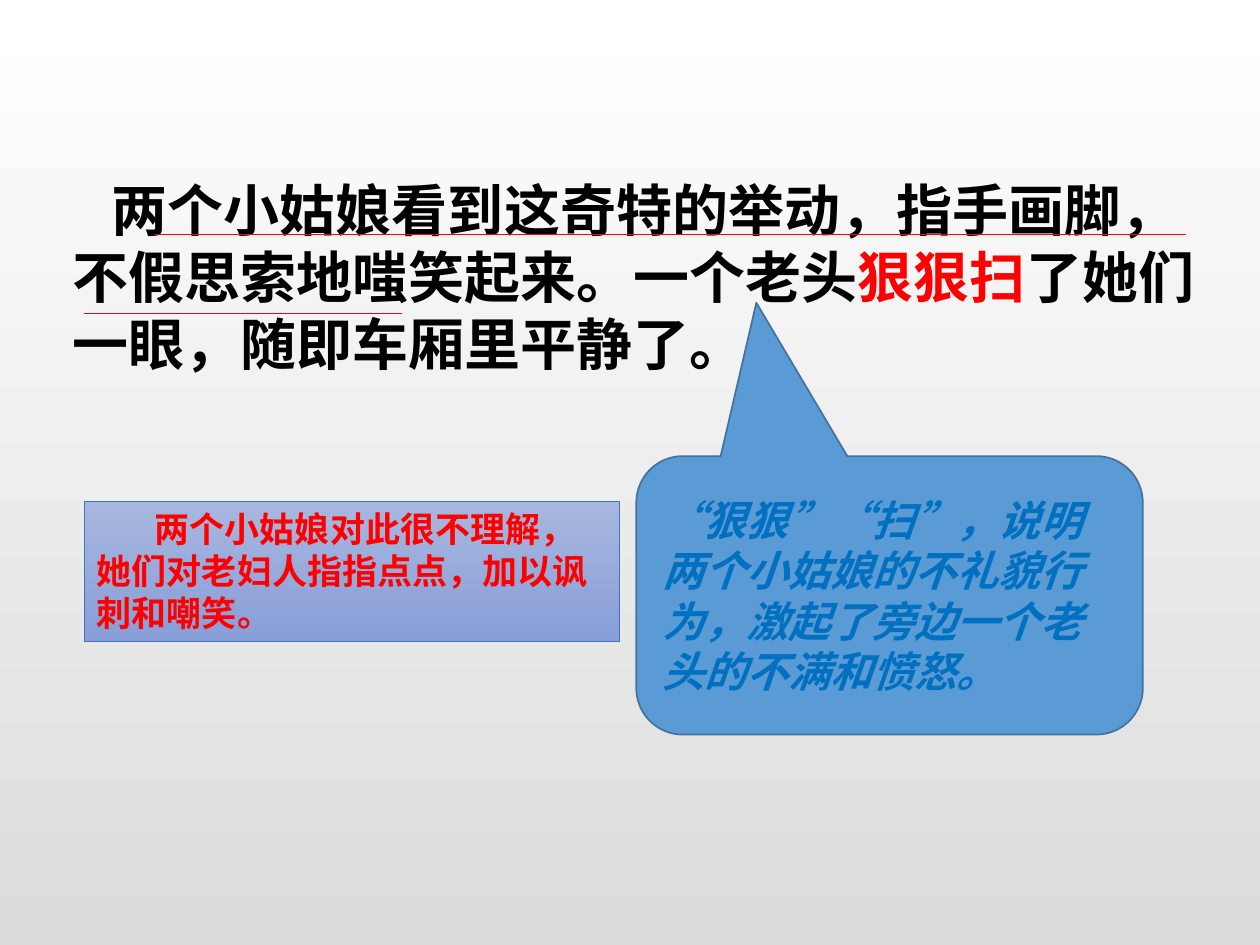
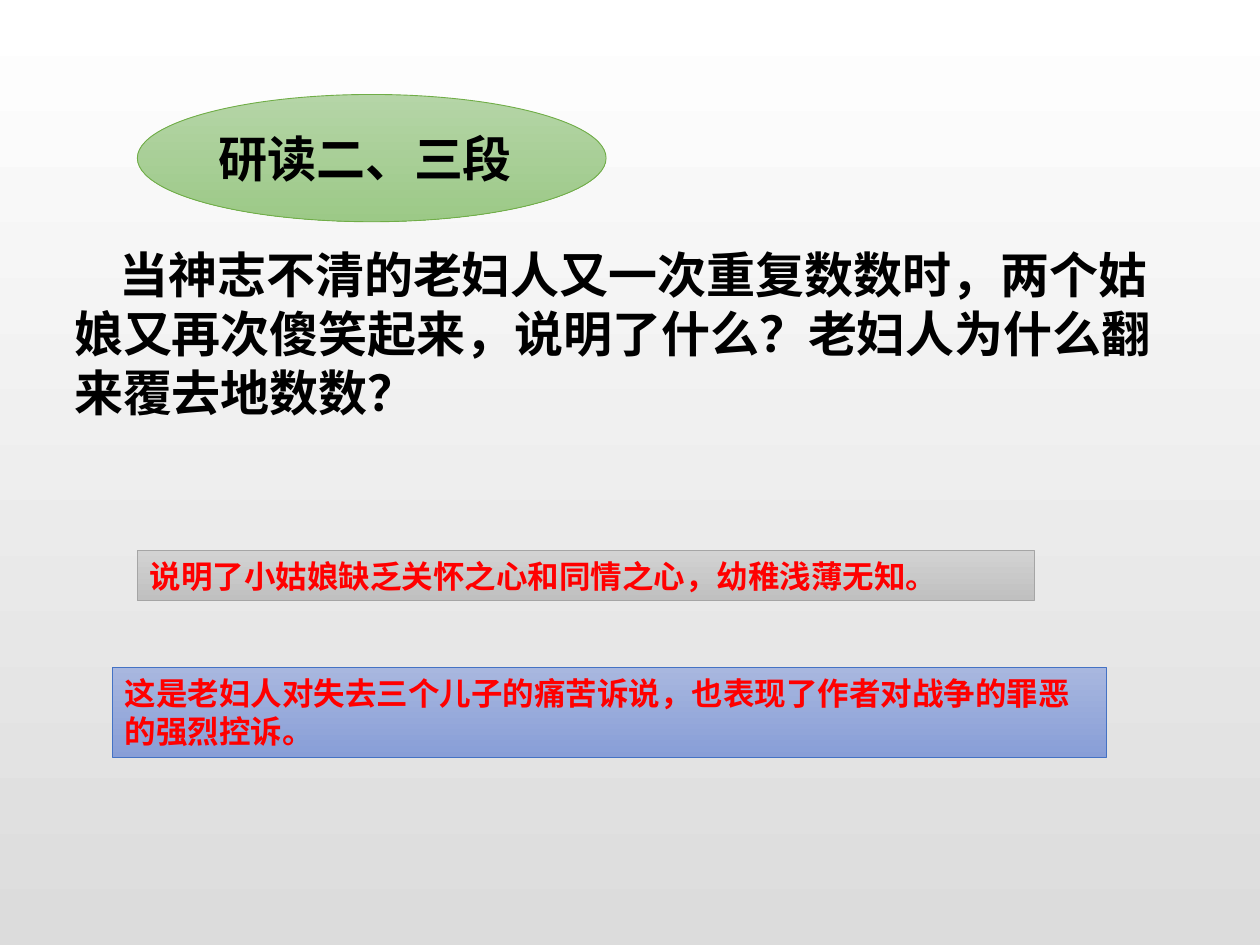
import pptx
import pptx.util
import pptx.dml.color
import pptx.enum.shapes
import pptx.enum.text
import pptx.oxml
import pptx.oxml.ns

Inches = pptx.util.Inches
Pt = pptx.util.Pt
SHAPE = pptx.enum.shapes.MSO_SHAPE
ANCHOR = pptx.enum.text.MSO_ANCHOR

COLORS = {
    "black": "000000", "red": "FF0000", "answer": "0070C0",
    "callout": "5B9BD5", "callout_edge": "43739E",
    "page_top": "FFFFFF", "page_end": "DCDCDC",
    "blue_top": "A8B7DF", "blue_end": "889ED7", "blue_edge": "4472C4",
    "gray_top": "D2D2D2", "gray_end": "C0C0C0", "gray_edge": "A5A5A5",
    "green_top": "B5D5A7", "green_end": "9CC987", "green_edge": "70AD47",
}
CJK = "Noto Sans CJK SC"

PASSAGE = {"font": CJK, "color": "black"}
NOTE = {"shape": SHAPE.RECTANGLE, "font": "Arial", "color": "red"}
BLUE_NOTE = {**NOTE, "gradient": "blue"}
GRAY_NOTE = {**NOTE, "gradient": "gray"}
HEADING = {"shape": SHAPE.OVAL, "gradient": "green", "font": CJK,
           "color": "black", "anchor": ANCHOR.MIDDLE}
CALLOUT = {"shape": SHAPE.ROUNDED_RECTANGULAR_CALLOUT, "solid": "callout",
           "edge": 1, "adjust": (-0.263, -1.051, 0.167), "font": CJK,
           "color": "answer", "italic": True, "anchor": ANCHOR.MIDDLE}

SLIDES = [
    {
        "boxes": [
            (PASSAGE, (0.48, 1.34, 9.13, 1.72), 32, 0.31,
             [("两个小姑娘看到这奇特的举动，指手画脚，不假思索地嗤笑起来。一个老头", None),
              ("狠狠扫", "red"),
              ("了她们一眼，随即车厢里平静了。", None)]),
            (CALLOUT, (5.05, 3.62, 4.02, 2.21), 24, 0,
             [("“狠狠”“扫”，说明两个小姑娘的不礼貌行为，激起了旁边一个老头的不满和愤怒。", None)]),
            (BLUE_NOTE, (0.67, 3.98, 4.25, 1.11), 20, 0.46,
             [("两个小姑娘对此很不理解，她们对老妇人指指点点，加以讽刺和嘲笑。", None)]),
        ],
        "underlines": [(1.22, 9.41, 1.86), (0.67, 3.19, 2.49)],
    },
    {
        "boxes": [
            (PASSAGE, (0.49, 1.89, 8.86, 1.51), 28, 0.36,
             [("当神志不清的老妇人又一次重复数数时，两个姑娘又再次傻笑起来，说明了什么？老妇人为什么翻来覆去地数数？", None)]),
            (GRAY_NOTE, (1.09, 4.37, 7.12, 0.4), 18, 0,
             [("说明了小姑娘缺乏关怀之心和同情之心，幼稚浅薄无知。", None)]),
            (BLUE_NOTE, (0.89, 5.3, 7.89, 0.71), 18, 0,
             [("这是老妇人对失去三个儿子的痛苦诉说，也表现了作者对战争的罪恶的强烈控诉。", None)]),
            (HEADING, (1.09, 0.75, 3.72, 1.01), 28, 0,
             [("研读二、三段", None)]),
        ],
        "underlines": [],
    },
]


def rgb(name):
    return pptx.dml.color.RGBColor.from_string(COLORS[name])


def shade(fill, name):
    fill.gradient()
    fill.gradient_angle = 270
    for stop, end, position in zip(fill.gradient_stops, ("top", "end"), (0, 1)):
        stop.color.rgb = rgb(f"{name}_{end}")
        stop.position = position


def write(box, style, size, indent, spans):
    frame = box.text_frame
    frame.word_wrap = True
    frame.vertical_anchor = style.get("anchor", ANCHOR.TOP)
    para = frame.paragraphs[0]
    para.alignment = pptx.enum.text.PP_ALIGN.LEFT
    properties = para._p.get_or_add_pPr()
    properties.set("marL", "0")
    properties.set("indent", str(Inches(indent)))
    font = para.font
    font.name, font.size, font.bold = style["font"], Pt(size), True
    font.italic = style.get("italic", False)
    font.color.rgb = rgb(style["color"])
    defaults = properties.find(pptx.oxml.ns.qn("a:defRPr"))
    east_asian = pptx.oxml.parse_xml(
        f'<a:ea {pptx.oxml.ns.nsdecls("a")} typeface="{CJK}"/>')
    defaults.append(east_asian)
    for text, color in spans:
        span = para.add_run()
        span.text = text
        if color:
            span.font.color.rgb = rgb(color)


def add_box(page, style, place, size, indent, spans):
    place = [Inches(length) for length in place]
    if "shape" in style:
        box = page.shapes.add_shape(style["shape"], *place)
        box.shadow.inherit = False
        for index, value in enumerate(style.get("adjust", ())):
            box.adjustments[index] = value
        if "solid" in style:
            box.fill.solid()
            box.fill.fore_color.rgb = rgb(style["solid"])
        else:
            shade(box.fill, style["gradient"])
        edge = style.get("solid") or style["gradient"]
        box.line.color.rgb = rgb(f"{edge}_edge")
        box.line.width = Pt(style.get("edge", 0.5))
    else:
        box = page.shapes.add_textbox(*place)
    write(box, style, size, indent, spans)


def add_underline(page, left, right, top):
    line = page.shapes.add_connector(
        pptx.enum.shapes.MSO_CONNECTOR.STRAIGHT,
        Inches(left), Inches(top), Inches(right), Inches(top))
    line.line.color.rgb = rgb("red")
    line.line.width = Pt(0.5)
    line._element.spPr.append(pptx.oxml.parse_xml(
        f'<a:effectLst {pptx.oxml.ns.nsdecls("a")}/>'))


def main():
    deck = pptx.Presentation()
    deck.slide_width, deck.slide_height = Inches(10), Inches(7.5)
    for content in SLIDES:
        page = deck.slides.add_slide(deck.slide_layouts[6])
        shade(page.background.fill, "page")
        for box in content["boxes"]:
            add_box(page, *box)
        for underline in content["underlines"]:
            add_underline(page, *underline)
    deck.save("out.pptx")


if __name__ == "__main__":
    main()
